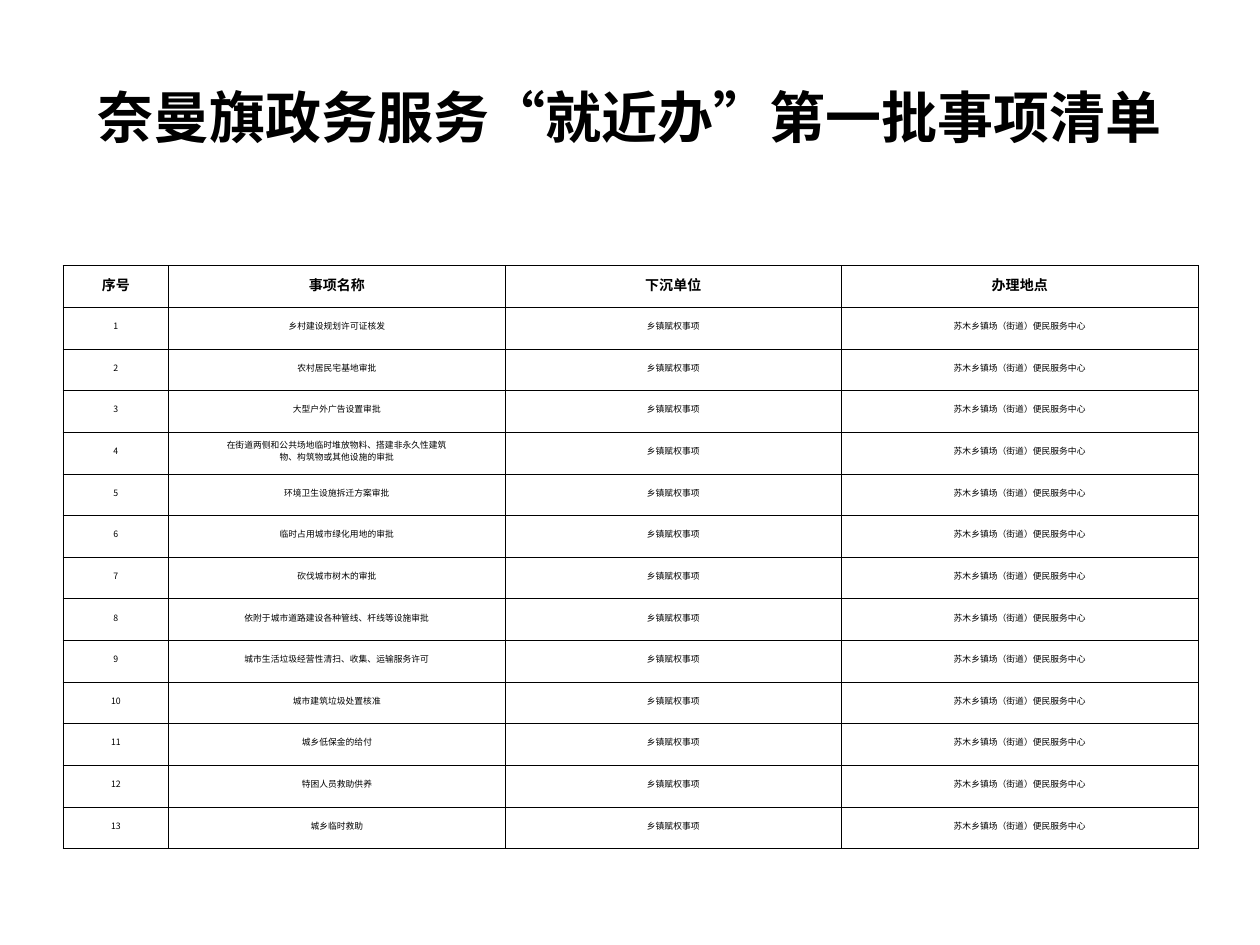
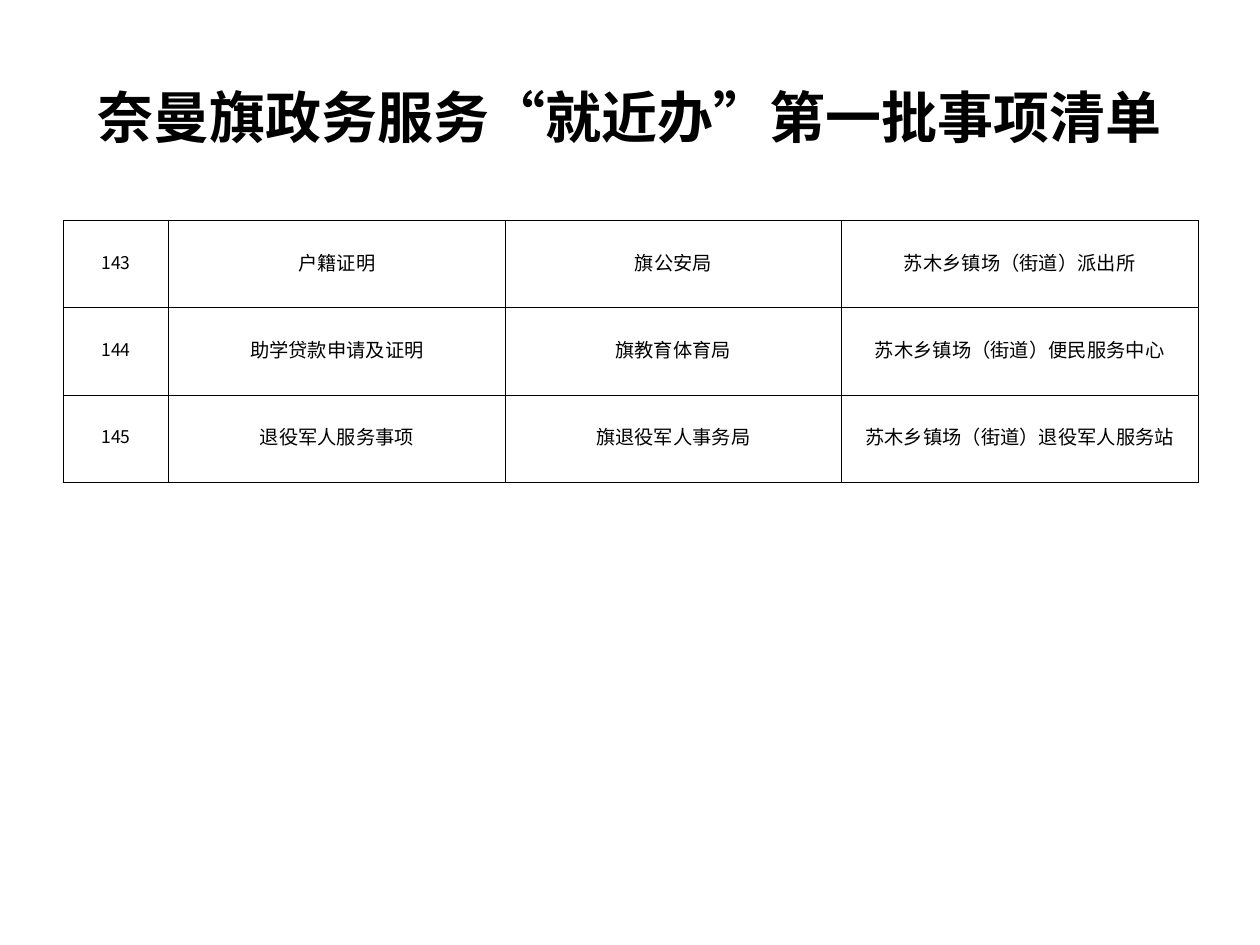
from lxml import etree
from pptx import Presentation
from pptx import util as u
from pptx.dml.color import RGBColor
from pptx.enum import lang, text
from pptx.oxml.ns import qn

TITLE = "奈曼旗政务服务“就近办”第一批事项清单"
HEADINGS = ["序号", "事项名称", "下沉单位", "办理地点"]
TOWN_UNIT = "乡镇赋权事项"
SERVICE_CENTRE = "苏木乡镇场（街道）便民服务中心"
TOWN_ITEMS = [
    "乡村建设规划许可证核发",
    "农村居民宅基地审批",
    "大型户外广告设置审批",
    "在街道两侧和公共场地临时堆放物料、搭建非永久性建筑\n物、构筑物或其他设施的审批",
    "环境卫生设施拆迁方案审批",
    "临时占用城市绿化用地的审批",
    "砍伐城市树木的审批",
    "依附于城市道路建设各种管线、杆线等设施审批",
    "城市生活垃圾经营性清扫、收集、运输服务许可",
    "城市建筑垃圾处置核准",
    "城乡低保金的给付",
    "特困人员救助供养",
    "城乡临时救助",
]
BUREAU_ITEMS = [
    ["143", "户籍证明", "旗公安局", "苏木乡镇场（街道）派出所"],
    ["144", "助学贷款申请及证明", "旗教育体育局", SERVICE_CENTRE],
    ["145", "退役军人服务事项", "旗退役军人事务局", "苏木乡镇场（街道）退役军人服务站"],
]


def color(value):
    """Turn a hex string into a colour."""
    return RGBColor.from_string(value)


class ListDeck:
    """Hold the list style and the current page."""

    INK = "000000"
    LATIN, HAN = "Arial", "Noto Sans CJK SC"
    COLUMNS = [0.84, 2.67, 2.67, 2.83]
    CELL = {
        "margin_left": u.Inches(0.01),
        "margin_right": u.Inches(0.01),
        "margin_top": u.Inches(0.01),
        "margin_bottom": u.Inches(0.05),
        "vertical_anchor": text.MSO_ANCHOR.MIDDLE,
    }

    def __init__(self):
        """Open an empty deck of 10 by 7.5 inches."""
        self.deck = Presentation()
        self.deck.slide_width = u.Inches(10)
        self.deck.slide_height = u.Inches(7.5)
        self.page = None

    def add_page(self):
        """Start a page with the shared title."""
        self.page = self.deck.slides.add_slide(self.deck.slide_layouts[6])
        box = self.page.shapes.add_textbox(
            u.Inches(0.5), u.Inches(0.3), u.Inches(9), u.Inches(1.25))
        box.text_frame.word_wrap = True
        box.text_frame.vertical_anchor = text.MSO_ANCHOR.MIDDLE
        self.add_lines(box.text_frame, TITLE, 32, bold=True)

    def add_lines(self, frame, words, size, bold=False, latin=LATIN):
        """Set centred lines in one style."""
        style = {"size": u.Pt(size), "bold": bold, "name": latin,
                 "language_id": lang.MSO_LANGUAGE_ID.SIMPLIFIED_CHINESE}
        for number, line in enumerate(words.split("\n")):
            para = frame.add_paragraph() if number else frame.paragraphs[0]
            para.alignment = text.PP_ALIGN.CENTER
            span = para.add_run()
            span.text = line
            span.font.color.rgb = color(self.INK)
            for name, value in style.items():
                setattr(span.font, name, value)
            latin_font = span.font._element.find(qn("a:latin"))
            han_font = etree.Element(qn("a:ea"), typeface=self.HAN)
            latin_font.addnext(han_font)

    def add_borders(self, cell, sides):
        """Rule the named sides of a cell and clear the others."""
        properties = cell._tc.get_or_add_tcPr()
        for side in "LRTB":
            line = etree.SubElement(properties, qn(f"a:ln{side}"), w=str(u.Pt(0.5)))
            if side in sides:
                fill = etree.SubElement(line, qn("a:solidFill"))
                etree.SubElement(fill, qn("a:srgbClr"), val=self.INK)
            else:
                etree.SubElement(line, qn("a:noFill"))

    def add_list(self, rows, height, number_size, item_size, headed=False):
        """Add a list table, optionally under a blank row and headings."""
        if headed:
            rows = [[""] * len(HEADINGS), HEADINGS] + rows
        table = self.page.shapes.add_table(
            len(rows), len(self.COLUMNS), u.Inches(0.5), u.Inches(1.75),
            u.Inches(9), u.Inches(height)).table
        table.first_row = table.horz_banding = False
        for column, width in zip(table.columns, self.COLUMNS):
            column.width = u.Inches(width)
        for y, words in enumerate(rows):
            table.rows[y].height = round(u.Inches(height) / len(rows))
            for x, word in enumerate(words):
                cell = table.cell(y, x)
                for name, value in self.CELL.items():
                    setattr(cell, name, value)
                self.add_borders(cell, "B" if headed and y == 0 else "LRTB")
                cell.fill.background()
                if headed and y == 1:
                    self.add_lines(cell.text_frame, word, 8, bold=True)
                elif x == 0:
                    self.add_lines(cell.text_frame, word, number_size, latin=self.HAN)
                else:
                    self.add_lines(cell.text_frame, word, item_size)
        if headed:
            table.cell(0, 1).merge(table.cell(0, 3))


def main():
    """Build both pages of the list."""
    service_list = ListDeck()
    service_list.add_page()
    town_rows = [[str(number), item, TOWN_UNIT, SERVICE_CENTRE]
                 for number, item in enumerate(TOWN_ITEMS, 1)]
    service_list.add_list(town_rows, 4.96, 5, 5, headed=True)
    service_list.add_page()
    service_list.add_list(BUREAU_ITEMS, 2.08, 10, 11)
    service_list.deck.save("out.pptx")


if __name__ == "__main__":
    main()
